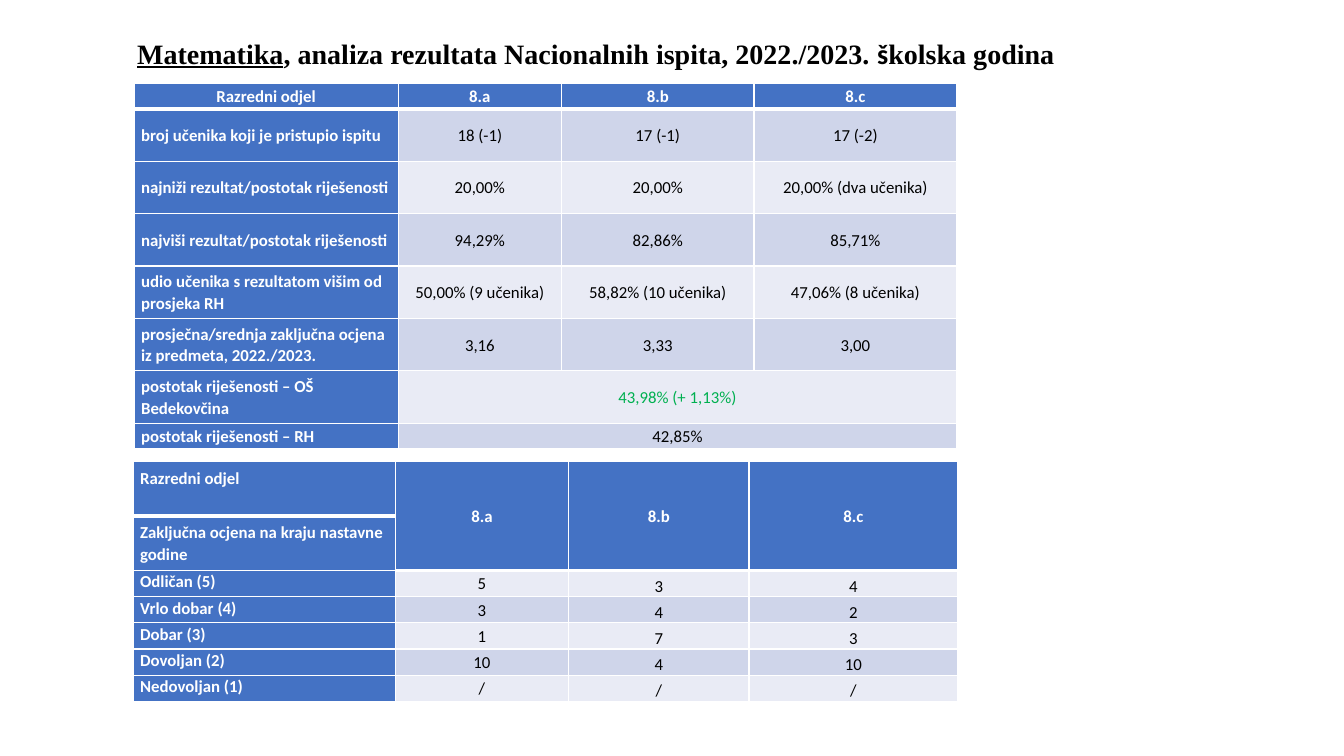
from lxml import etree
from pptx import Presentation
from pptx.dml.color import RGBColor
from pptx.enum.text import MSO_ANCHOR as ANCHOR, PP_ALIGN as ALIGN
from pptx.oxml.ns import qn
from pptx.util import Inches, Pt

BLUE, DARK_BAND, LIGHT_BAND = "4472C4", "CFD5EA", "E9EBF5"
WHITE, BLACK, GREEN = "FFFFFF", "000000", "00B050"
CELL_FORMAT = {"margin_left": Inches(0.07), "margin_right": Inches(0.07),
               "margin_top": 0, "margin_bottom": 0}
TITLE_RUNS = [
    ("Matematika", "Times New Roman", True),
    (", analiza rezultata Nacionalnih ispita, 2022./2023. ", "Times New Roman", False),
    ("š", "Calibri", False),
    ("kolska godina", "Times New Roman", False),
]
RESULTS = [
    ["Razredni odjel", "8.a", "8.b", "8.c"],
    ["broj učenika koji je pristupio ispitu", "18 (-1)", "17 (-1)", "17 (-2)"],
    ["najniži rezultat/postotak riješenosti", "20,00%", "20,00%", "20,00% (dva učenika)"],
    ["najviši rezultat/postotak riješenosti", "94,29%", "82,86%", "85,71%"],
    ["udio učenika s rezultatom višim od prosjeka RH",
     "50,00% (9 učenika)", "58,82% (10 učenika)", "47,06% (8 učenika)"],
    ["prosječna/srednja zaključna ocjena iz predmeta, 2022./2023.", "3,16", "3,33", "3,00"],
    ["postotak riješenosti – OŠ Bedekovčina", "43,98% (+ 1,13%)", "", ""],
    ["postotak riješenosti – RH", "42,85%", "", ""],
]
GRADES = [
    ["Razredni odjel", "8.a", "8.b", "8.c"],
    ["Zaključna ocjena na kraju nastavne godine", "", "", ""],
    ["Odličan (5)", "5", "3", "4"],
    ["Vrlo dobar (4)", "3", "4", "2"],
    ["Dobar (3)", "1", "7", "3"],
    ["Dovoljan (2)", "10", "4", "10"],
    ["Nedovoljan (1)", "/", "/", "/"],
]


def rgb(color):
    return RGBColor.from_string(color)


def set_attrs(obj, values):
    for name, value in values.items():
        setattr(obj, name, value)


def add_run(p, text, color, **font):
    r = p.add_run()
    r.text = text
    set_attrs(r.font, font)
    r.font.color.rgb = rgb(color)


def add_borders(cell, top, bottom):
    tcPr = cell._tc.get_or_add_tcPr()
    for side, width in (("L", 1), ("R", 1), ("T", top), ("B", bottom)):
        ln = etree.SubElement(tcPr, qn(f"a:ln{side}"), w=str(Pt(width)))
        fill = etree.SubElement(ln, qn("a:solidFill"))
        etree.SubElement(fill, qn("a:srgbClr"), val=WHITE)


def fill_cell(cell, text, color, fill, bold, align):
    set_attrs(cell, CELL_FORMAT)
    cell.vertical_anchor = ANCHOR.MIDDLE
    cell.fill.solid()
    cell.fill.fore_color.rgb = rgb(fill)
    p = cell.text_frame.paragraphs[0]
    set_attrs(p, {"alignment": align, "line_spacing": 1.07})
    if text:
        add_run(p, text, color, name="Calibri", size=Pt(12), bold=bold)


def add_grid(slide, left, top, widths, heights, rows, header_rows, bands):
    """Add a table with blue header rows, a blue first column and banded values."""
    table = slide.shapes.add_table(
        len(rows), len(widths), Inches(left), Inches(top),
        Inches(sum(widths)), Inches(sum(heights))).table
    for col, width in zip(table.columns, widths):
        col.width = Inches(width)
    for row, height in zip(table.rows, heights):
        row.height = Inches(height)

    def rule(i, j):
        return 3 if i == 0 or (j and 0 < i < header_rows) else 1

    for i, row in enumerate(rows):
        for j, text in enumerate(row):
            cell = table.cell(i, j)
            head = i < header_rows or j == 0
            add_borders(cell, rule(i - 1, j), rule(i, j))
            fill_cell(cell, text, WHITE if head else BLACK,
                      BLUE if head else bands[(i - header_rows) % 2], head,
                      ALIGN.CENTER if j or (i == 0 and header_rows == 1) else ALIGN.LEFT)
    return table


def add_title(slide):
    sp = slide.shapes.title
    set_attrs(sp, {"left": Inches(1.26), "top": Inches(0.32),
                   "width": Inches(9.83), "height": Inches(0.41)})
    tf = sp.text_frame
    set_attrs(tf, {"word_wrap": True, "vertical_anchor": ANCHOR.MIDDLE})
    p = tf.paragraphs[0]
    p.alignment = ALIGN.LEFT
    for text, font, underline in TITLE_RUNS:
        add_run(p, text, BLACK, name=font, size=Pt(20), bold=True, underline=underline)


def add_results(slide):
    table = add_grid(slide, 1.33, 0.83, [2.62, 1.62, 1.91, 2.01],
                     [0.25] + [0.52] * 6 + [0.25], RESULTS, 1, (DARK_BAND, LIGHT_BAND))
    for i in (6, 7):
        table.cell(i, 1).merge(table.cell(i, 3))
    school = table.cell(6, 1).text_frame.paragraphs[0].runs[0]
    school.font.color.rgb = rgb(GREEN)


def add_grades(slide):
    table = add_grid(slide, 1.32, 4.58, [2.6, 1.72, 1.79, 2.07],
                     [0.54] * 2 + [0.26] * 5, GRADES, 2, (LIGHT_BAND, DARK_BAND))
    for j in (1, 2, 3):
        table.cell(0, j).merge(table.cell(1, j))
    set_attrs(table.cell(0, 0), {"vertical_anchor": ANCHOR.TOP, "margin_top": Inches(0.05)})
    for i in range(2, len(GRADES)):
        for j, anchor in ((0, ANCHOR.TOP), (2, ANCHOR.BOTTOM), (3, ANCHOR.BOTTOM)):
            table.cell(i, j).vertical_anchor = anchor


def main():
    prs = Presentation()
    set_attrs(prs, {"slide_width": Inches(13.33), "slide_height": Inches(7.5)})
    slide = prs.slides.add_slide(prs.slide_layouts[5])
    add_results(slide)
    add_grades(slide)
    add_title(slide)
    prs.save("out.pptx")


if __name__ == "__main__":
    main()
